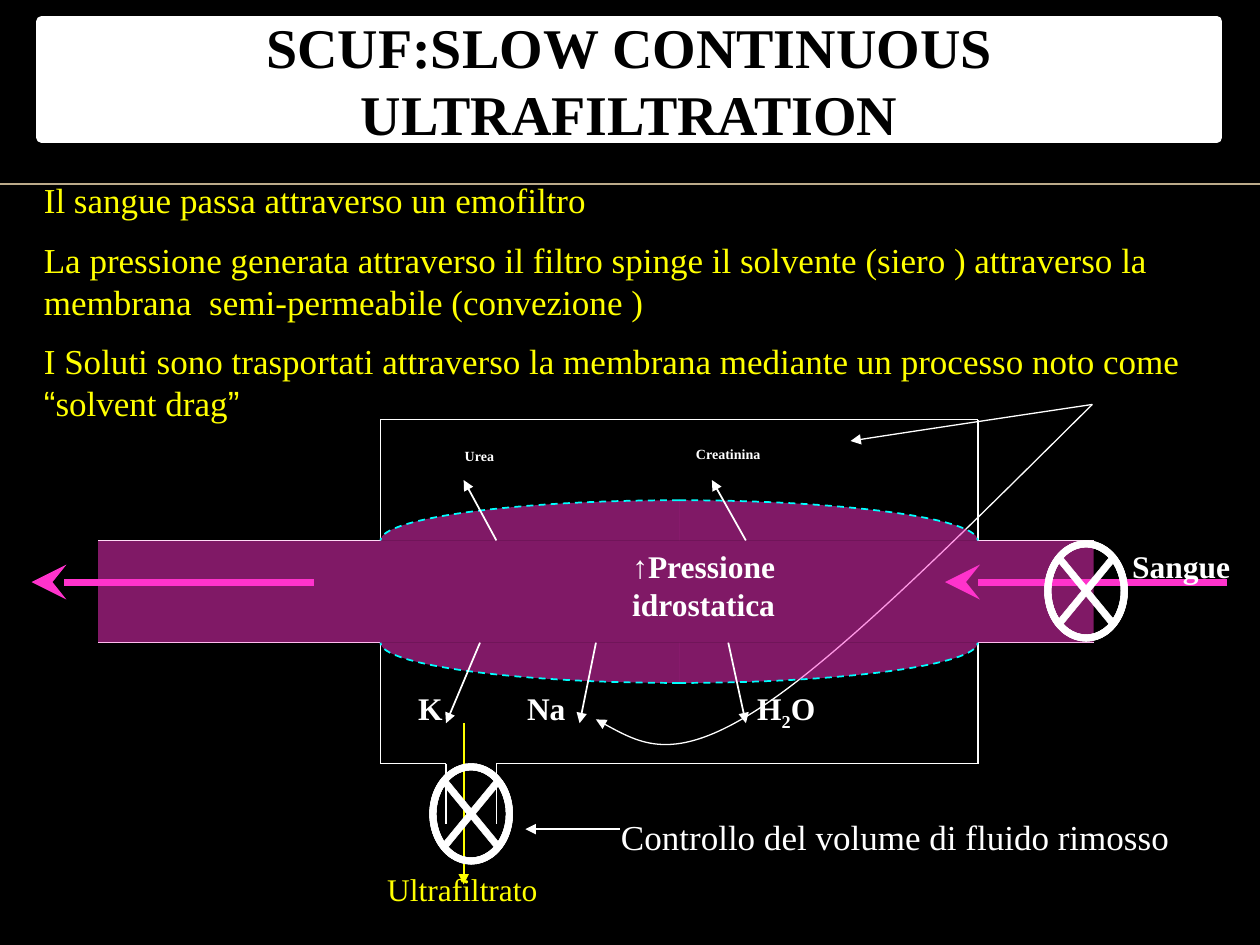
from copy import deepcopy
from dataclasses import dataclass
from lxml.etree import SubElement
from pptx import Presentation
from pptx.dml.color import RGBColor
from pptx.enum.dml import MSO_LINE
from pptx.enum.shapes import MSO_CONNECTOR, MSO_SHAPE
from pptx.enum.text import MSO_ANCHOR, PP_ALIGN
from pptx.oxml.ns import qn
from pptx.util import Inches, Pt


@dataclass(frozen=True)
class Theme:
    back: str = "000000"
    white: str = "FFFFFF"
    gold: str = "FFFF00"
    rule: str = "BBAA8A"
    blood: str = "FF33CC"
    skin: str = "00FFFF"
    font: str = "Times New Roman"
    quote: str = "Arial"
    head: int = 32
    body: int = 20
    label: int = 18
    small: int = 8


T = Theme()
TITLE = "SCUF:SLOW CONTINUOUS ULTRAFILTRATION"
BODY = [
    "Il sangue passa attraverso un emofiltro",
    "La pressione generata attraverso il filtro spinge il solvente (siero ) attraverso la "
    "membrana  semi-permeabile (convezione )",
    "I Soluti sono trasportati attraverso la membrana mediante un processo noto come “solvent drag”",
]
LABELS = [
    ("Urea", (3.28, 3.5, 1.05, 0.31), T.small, T.white, True),
    ("Creatinina", (5.12, 3.49, 1.32, 0.49), T.small, T.white, True),
    ("K", (3.02, 5.42, 0.79, 0.8), T.label, T.white, True),
    ("Na", (3.94, 5.42, 0.79, 0.8), T.label, T.white, True),
    ("H2O", (5.78, 5.42, 0.92, 0.8), T.label, T.white, True),
    ("Sangue ", (8.81, 4.29, 1.19, 0.64), T.label, T.white, True),
    ("Ultrafiltrato", (2.75, 6.86, 1.84, 0.64), T.label, T.gold, False),
    ("↑Pressione idrostatica", (4.73, 4.29, 1.71, 0.8), T.label, T.white, True),
]
CONTROL = "Controllo del volume di fluido rimosso"

LEFT, RIGHT, MID = 3.02, 7.76, 5.39
ROOF, TOP, BASE, FLOOR = 3.33, 4.29, 5.1, 6.06
START, END = 0.78, 8.68
DRAIN, SPOUT = (3.54, 3.94), 6.54
BULGE = 0.32
WALLS = [
    (LEFT, ROOF, RIGHT, ROOF),
    (DRAIN[0], FLOOR, LEFT, FLOOR),
    (DRAIN[1], FLOOR, RIGHT, FLOOR),
    *[(x, y, x, y + 0.96) for x in (LEFT, RIGHT) for y in (ROOF, BASE)],
    *[(a, y, b, y) for a, b in ((START, LEFT), (RIGHT, END)) for y in (TOP, BASE)],
    *[(x, FLOOR, x, SPOUT) for x in DRAIN],
]
FLOWS = [(9.74, 4.62, 7.5, 4.62), (2.49, 4.62, 0.25, 4.62)]
DRIFTS = [
    (3.81, BASE, 3.54, 5.74),
    (4.73, BASE, 4.6, 5.74),
    (5.78, BASE, 5.92, 5.74),
    (3.94, TOP, 3.68, 3.81),
    (5.92, TOP, 5.65, 3.81),
]
POINTERS = [
    [(8.67, 3.21), (7.66, 4.21), (6.66, 5.22), (6, 5.64), (5.34, 6.06), (5.04, 5.88), (4.73, 5.71)],
    [(8.67, 3.21), (7.87, 3.33), (7.07, 3.45), (6.75, 3.5)],
]
VALVES = [(8.29, TOP), (3.41, FLOOR)]

deck = Presentation()
deck.slide_width, deck.slide_height = Inches(10), Inches(7.5)
slide = deck.slides.add_slide(deck.slide_layouts[6])
slide.background.fill.solid()
slide.background.fill.fore_color.rgb = RGBColor.from_string(T.back)
shapes = slide.shapes


def paint(fill, color, alpha=None):
    fill.solid()
    fill.fore_color.rgb = RGBColor.from_string(color)
    if alpha:
        tone = fill._xPr.find(qn("a:solidFill"))[0]
        SubElement(tone, qn("a:alpha"), val=str(alpha * 1000))


def stroke(line, color, width, tip=None, size="med"):
    paint(line.fill, color)
    line.width = Pt(width)
    if tip:
        SubElement(line._get_or_add_ln(), qn("a:tailEnd"), type=tip, w=size, len=size)


def link(ends, color, width=1, tip=None, size="med"):
    wire = shapes.add_connector(MSO_CONNECTOR.STRAIGHT, *map(Inches, ends))
    stroke(wire.line, color, width, tip, size)
    SubElement(wire._element.spPr, qn("a:effectLst"))


def block(kind, box, color, alpha=None):
    item = shapes.add_shape(kind, *map(Inches, box))
    item.shadow.inherit = False
    paint(item.fill, color, alpha)
    item.line.fill.background()
    return item


def trace(node, kind, points, base):
    step = SubElement(node, qn("a:" + kind))
    for x, y in points:
        SubElement(step, qn("a:pt"), x=str(Inches(x) - base[0]), y=str(Inches(y) - base[1]))


def curve(points, hub=None):
    ends = [points[0], points[-1]]
    low = max(y for x, y in points[::3])
    pen = shapes.build_freeform(*map(Inches, ends[0]))
    pen.add_line_segments([(Inches(x), Inches(y)) for x, y in [*points[3::3], (ends[1][0], low)]], close=False)
    item = pen.convert_to_shape()
    item.shadow.inherit = False
    item.fill.background()
    base = (item.left, item.top)
    rim = item._element.xpath(".//a:pathLst/a:path")[0]
    for step in list(rim):
        rim.remove(step)
    trace(rim, "moveTo", points[:1], base)
    for i in range(1, len(points), 3):
        trace(rim, "cubicBezTo", points[i:i + 3], base)
    if hub:
        area = deepcopy(rim)
        rim.set("fill", "none")
        area.set("stroke", "0")
        trace(area, "lnTo", [hub], base)
        SubElement(area, qn("a:close"))
        rim.addnext(area)
    return item


def write(frame, lines, size, color, bold=False, align=PP_ALIGN.LEFT, gap=0):
    frame.word_wrap = True
    frame.text = "\n".join(lines)
    for para in frame.paragraphs:
        para.alignment, para.space_before = align, Pt(gap)
        text = para.text
        marks = [m for m in "“”2" if m in text]
        if marks:
            for m in marks:
                text = text.replace(m, f"\n{m}\n")
            para.text = ""
            for bit in filter(None, text.split("\n")):
                para.add_run().text = bit
        for run in para.runs:
            font = run.font
            font.name = T.quote if run.text in ("“", "”") else T.font
            font.size, font.bold = Pt(size), bold
            font.color.rgb = RGBColor.from_string(color)
            if run.text == "2":
                font._element.set("baseline", "-25000")


def note(box, lines, *style, **more):
    write(shapes.add_textbox(*map(Inches, box)).text_frame, lines, *style, **more)


link((0, 1.46, 10, 1.46), T.rule)
title = block(MSO_SHAPE.RECTANGLE, (0.33, 0.17, 9.33, 0.92), T.white)
stroke(title.line, T.white, 6)
title.text_frame.vertical_anchor = MSO_ANCHOR.MIDDLE
write(title.text_frame, [TITLE], T.head, T.back, True, PP_ALIGN.CENTER, 4)
note((0.25, 1.37, 9.5, 2.12), BODY, T.body, T.gold, gap=10)

for points in POINTERS:
    stroke(curve(points).line, T.white, 0.75, "triangle")
for ends in WALLS:
    link(ends, T.white)
for edge, way in ((TOP, -1), (BASE, 1)):
    for side in (LEFT, RIGHT):
        peak, bow = edge + way * BULGE, 0.55 * (side - MID)
        arc = curve([(MID, peak), (MID + bow, peak), (side, edge + way * 0.55 * BULGE), (side, edge)], (MID, edge))
        paint(arc.fill, T.blood, 50)
        stroke(arc.line, T.skin, 1)
        arc.line.dash_style = MSO_LINE.DASH
for ends in FLOWS:
    link(ends, T.blood, 4, "stealth", "lg")
for ends in DRIFTS:
    link(ends, T.white, 1, "triangle")
block(MSO_SHAPE.RECTANGLE, (START, TOP, END - START, BASE - TOP), T.blood, 50)
link((3.68, 5.74, 3.68, 7.02), T.gold, 1, "triangle")
for x, y in VALVES:
    for flip in (False, True):
        valve = block(MSO_SHAPE.NO_SYMBOL, (x, y, 0.66, 0.8), T.white)
        valve.adjustments[0] = 0.08
        stroke(valve.line, T.white, 0.25)
        if flip:
            valve._element.spPr.xfrm.set("flipH", "1")
for text, box, size, color, bold in LABELS:
    note(box, [text], size, color, bold, PP_ALIGN.CENTER)
note((4.83, 6.42, 4.69, 0.44), [CONTROL], T.body, T.white, gap=10)
link((4.92, 6.58, 4.17, 6.58), T.white, 0.75, "triangle")
deck.save("out.pptx")
